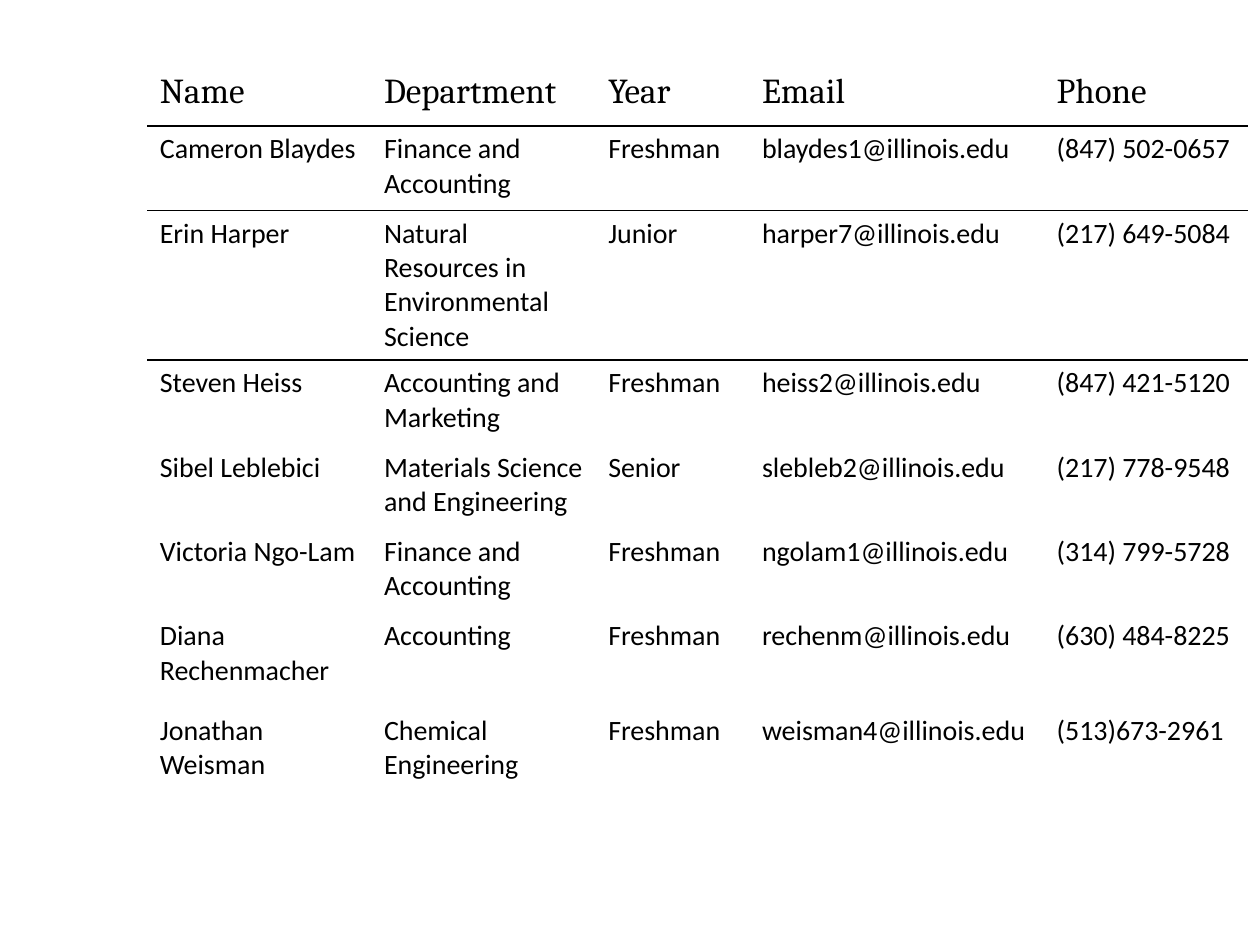
import pptx
import pptx.dml.color
import pptx.oxml
import pptx.oxml.ns
import pptx.util
from pptx.util import Cm

COLORS = {"text": "000000", "rule": "000000"}
PLAIN_TABLE_STYLE = "{2D5ABB26-0587-4C30-8999-92F81FD0307C}"
COLUMN_WIDTHS = [4.52, 4.52, 3.1, 5.94, 4.11]
ROW_HEIGHTS = [1.22, 1.7, 2.97, 1.7, 1.7, 1.7, 1.9, 2.97]
MEMBERS = [
    ["Name", "Department", "Year", "Email", "Phone"],
    ["Cameron Blaydes", "Finance and Accounting", "Freshman", "blaydes1@illinois.edu", "(847) 502-0657"],
    ["Erin Harper", "Natural Resources in Environmental Science", "Junior", "harper7@illinois.edu", "(217) 649-5084"],
    ["Steven Heiss", "Accounting and Marketing", "Freshman", "heiss2@illinois.edu", "(847) 421-5120"],
    ["Sibel Leblebici", "Materials Science and Engineering", "Senior", "slebleb2@illinois.edu", "(217) 778-9548"],
    ["Victoria Ngo-Lam", "Finance and Accounting", "Freshman", "ngolam1@illinois.edu", "(314) 799-5728"],
    ["Diana Rechenmacher", "Accounting", "Freshman", "rechenm@illinois.edu", "(630) 484-8225"],
    ["Jonathan Weisman", "Chemical Engineering", "Freshman", "weisman4@illinois.edu", "(513)673-2961"],
]


def write_text(text_frame, text, *, font="Calibri", size=16, color="text"):
    paragraph = text_frame.paragraphs[0]
    run = paragraph.add_run()
    run.text = text
    run.font.name = font
    run.font.size = pptx.util.Pt(size)
    run.font.color.rgb = pptx.dml.color.RGBColor.from_string(COLORS[color])


class SlideBuilder:
    header_format = {"font": "Cambria", "size": 20}
    body_format = {"font": "Calibri", "size": 16}
    rule_points = 1

    def __init__(self, presentation):
        self.slide = presentation.slides.add_slide(presentation.slide_layouts[6])

    def border(self, cell, side):
        line = pptx.oxml.parse_xml(
            f'<a:{side} {pptx.oxml.ns.nsdecls("a")} w="{pptx.util.Pt(self.rule_points)}">'
            f'<a:solidFill><a:srgbClr val="{COLORS["rule"]}"/></a:solidFill></a:{side}>'
        )
        properties = cell._tc.get_or_add_tcPr()
        borders = [child for child in properties if child.tag.endswith(("lnT", "lnB"))]
        properties.insert(len(borders), line)

    def table(self, rows, left, top, widths, heights, ruled_rows):
        shape = self.slide.shapes.add_table(
            len(rows), len(widths), Cm(left), Cm(top), Cm(sum(widths)), Cm(sum(heights))
        )
        table = shape.table
        table.first_row = False
        table.horz_banding = False
        table._tbl.tblPr.find(pptx.oxml.ns.qn("a:tableStyleId")).text = PLAIN_TABLE_STYLE
        for column, width in zip(table.columns, widths):
            column.width = Cm(width)
        for row_index, (row, height) in enumerate(zip(table.rows, heights)):
            row.height = Cm(height)
            text_format = self.body_format if row_index else self.header_format
            for cell, text in zip(row.cells, rows[row_index]):
                cell.fill.background()
                write_text(cell.text_frame, text, **text_format)
                if row_index - 1 in ruled_rows:
                    self.border(cell, "lnT")
                if row_index in ruled_rows:
                    self.border(cell, "lnB")


def main():
    presentation = pptx.Presentation()
    presentation.slide_width = Cm(25.4)
    presentation.slide_height = Cm(19.05)
    builder = SlideBuilder(presentation)
    builder.table(MEMBERS, 2.97, 1.32, COLUMN_WIDTHS, ROW_HEIGHTS, ruled_rows=(0, 1))
    presentation.save("out.pptx")


if __name__ == "__main__":
    main()
